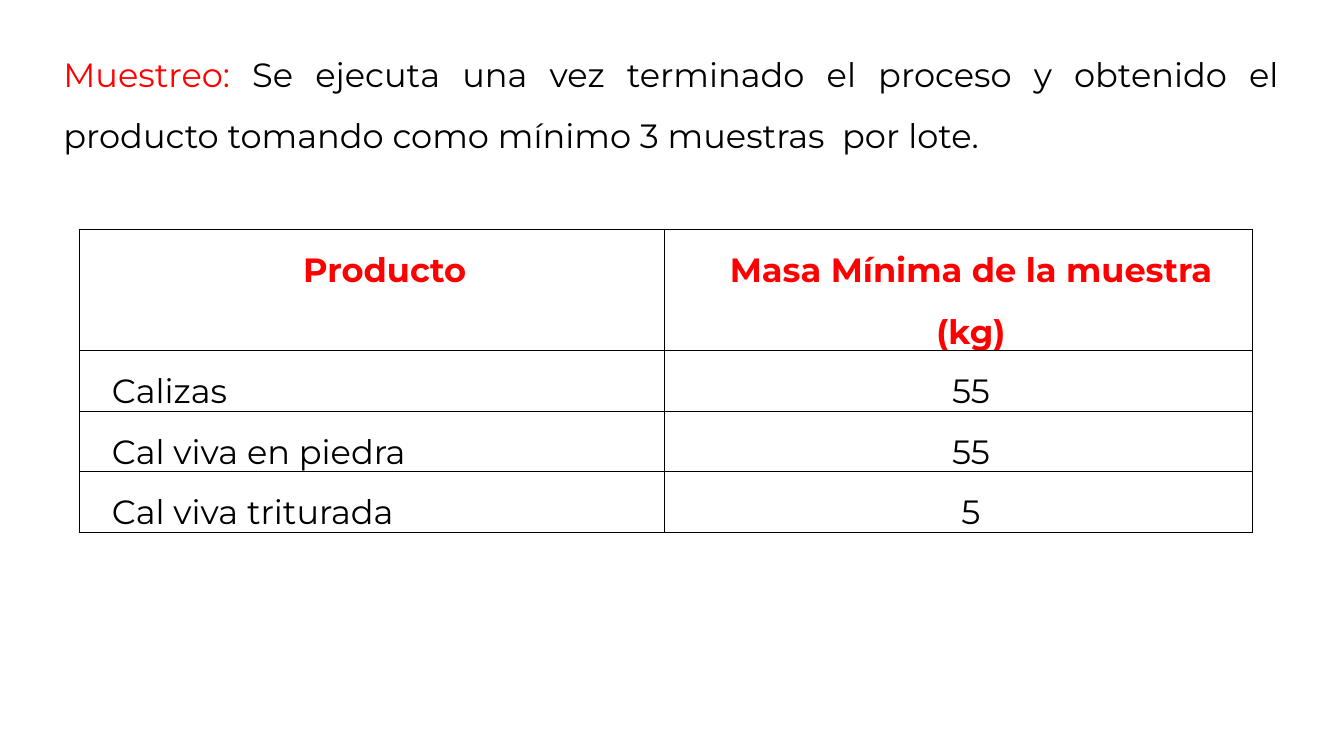
"""Build the slide on sampling and the minimum sample mass per product."""
from lxml import etree
from pptx import Presentation
from pptx.dml.color import RGBColor
from pptx.enum.text import PP_ALIGN
from pptx.oxml.ns import qn
from pptx.util import Inches, Pt

CENTER, JUSTIFY = PP_ALIGN.CENTER, PP_ALIGN.JUSTIFY
RED, BLACK = "FF0000", "000000"
ROWS = [
    ("Producto", "Masa Mínima de la muestra (kg)"),
    ("Calizas", "55"),
    ("Cal viva en piedra", "55"),
    ("Cal viva triturada", "5"),
]


def color(value):
    return RGBColor.from_string(value)


def format_paragraph(p, align):
    p.alignment = align
    p.line_spacing = 1.5
    p.font.name = "Montserrat"
    p.font.size = Pt(24)


prs = Presentation()
prs.slide_width, prs.slide_height = Inches(13.33), Inches(7.5)
s = prs.slides.add_slide(prs.slide_layouts[6])

tf = s.shapes.add_textbox(Inches(0.53), Inches(0.29), Inches(12.25), Inches(1.25)).text_frame
tf.word_wrap = True
p = tf.paragraphs[0]
format_paragraph(p, JUSTIFY)
for text, text_color in [
    ("Muestreo:", RED),
    (" Se ejecuta una vez terminado el proceso y obtenido el producto"
     " tomando como mínimo 3 muestras  por lote.", BLACK),
]:
    r = p.add_run()
    r.text = text
    r.font.color.rgb = color(text_color)

table = s.shapes.add_table(
    len(ROWS), 2, Inches(0.79), Inches(2.28), Inches(11.63), Inches(3)).table
table.first_row = table.horz_banding = False
table.columns[0].width, table.columns[1].width = Inches(5.8), Inches(5.83)

for i, values in enumerate(ROWS):
    header = i == 0
    table.rows[i].height = Inches(1.2 if header else 0.6)
    for j, value in enumerate(values):
        cell = table.cell(i, j)
        cell.text = value
        cell.margin_left = cell.margin_right = Inches(0.07)
        cell.margin_top = cell.margin_bottom = 0
        p = cell.text_frame.paragraphs[0]
        format_paragraph(p, CENTER if header or j else JUSTIFY)
        p.font.bold = header
        p.font.color.rgb = color(RED if header else BLACK)
        p._p.get_or_add_pPr().set("marL", str(Inches(0.25)))
        tcPr = cell._tc.get_or_add_tcPr()
        for side in ("a:lnL", "a:lnR", "a:lnT", "a:lnB"):
            ln = etree.SubElement(tcPr, qn(side), w=str(Pt(1)))
            fill = etree.SubElement(ln, qn("a:solidFill"))
            etree.SubElement(fill, qn("a:srgbClr"), val=BLACK)
        cell.fill.background()

prs.save("out.pptx")
